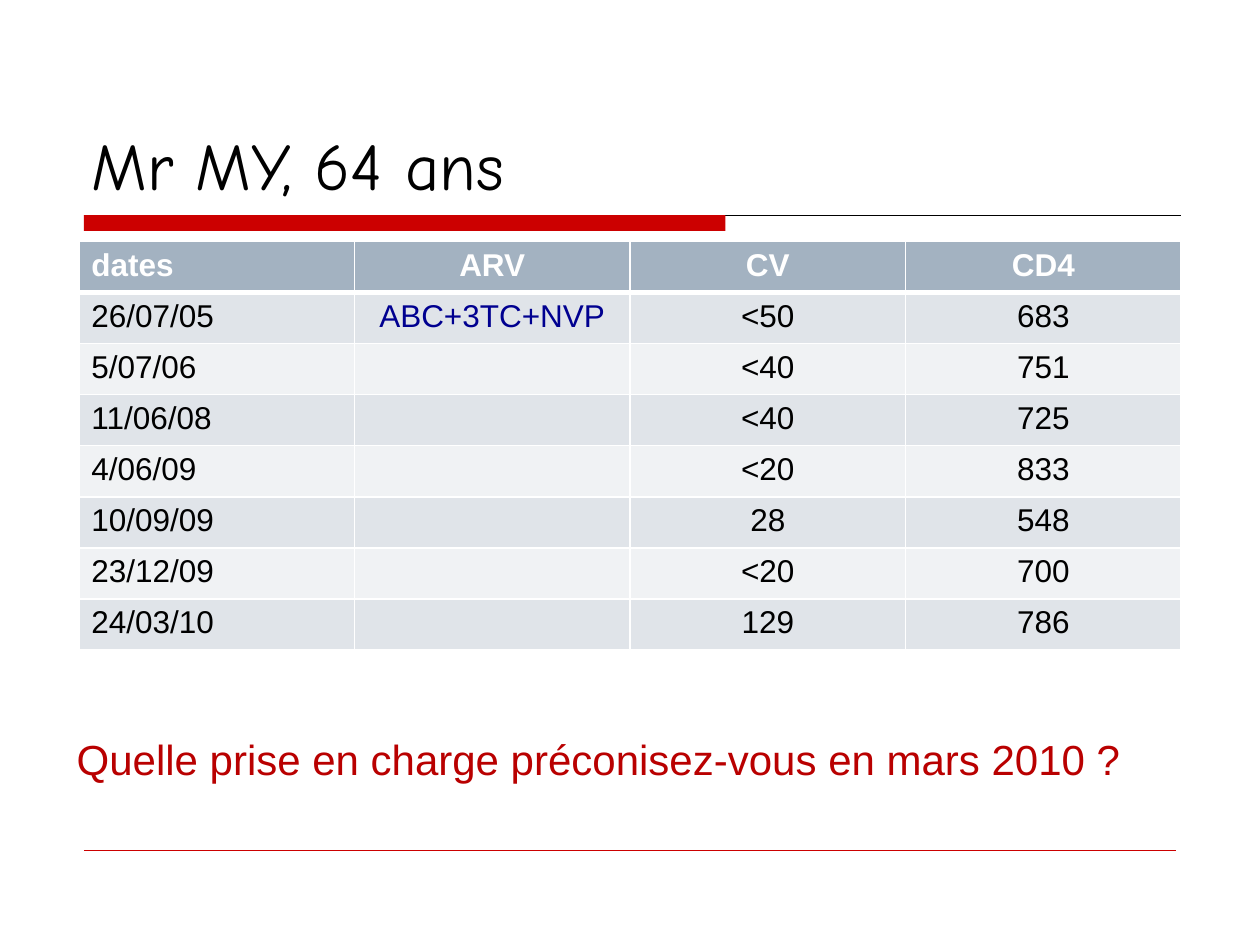
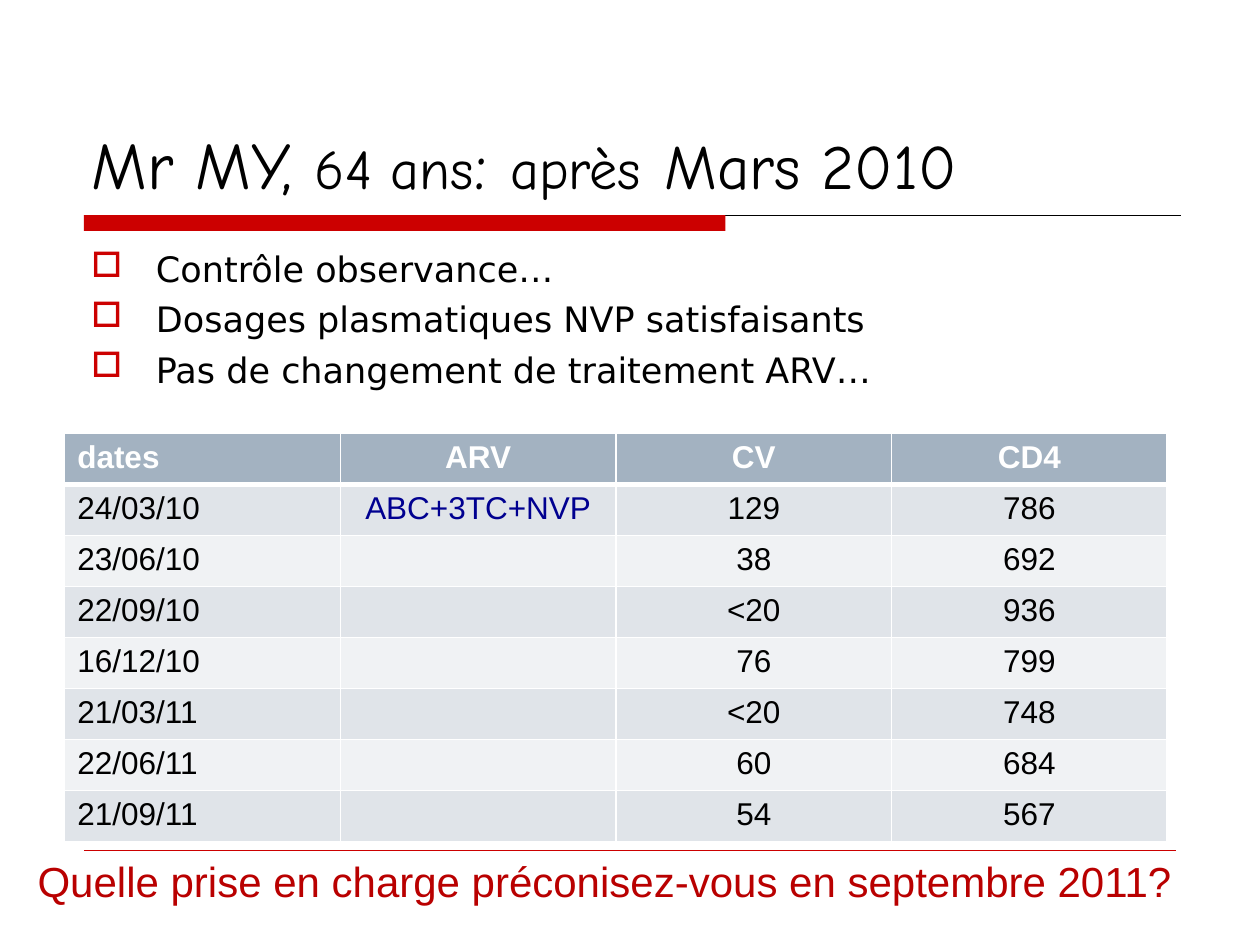
"""Build two patient follow-up slides with tables of laboratory results."""
import dataclasses
import typing

import lxml.etree
import pptx
import pptx.dml.color
import pptx.enum.shapes
import pptx.enum.text
import pptx.oxml.ns
import pptx.slide
import pptx.text.text
import pptx.util

Pt = pptx.util.Pt
qn = pptx.oxml.ns.qn
ALIGN = pptx.enum.text.PP_ALIGN
ANCHOR = pptx.enum.text.MSO_ANCHOR

RED, QUESTION_RED, BLACK, WHITE = "CC0000", "B90000", "000000", "FFFFFF"
HEADER_FILL, ROW_FILLS, ARV_BLUE = "A3B2C1", ("E0E4E9", "F0F2F4"), "000090"
TITLE_FONT, BODY_FONT, TABLE_FONT = "Comic Neue", "DejaVu Sans", "Arial"
HEADINGS = ("dates", "ARV", "CV", "CD4")
ARV = "ABC+3TC+NVP"
COL_WIDTH, ROW_HEIGHT = 157.5, 29.16


@dataclasses.dataclass(frozen=True)
class Box:
    left: float
    top: float
    width: float
    height: float

    def lengths(self) -> tuple[int, ...]:
        return tuple(Pt(v) for v in dataclasses.astuple(self))


@dataclasses.dataclass(frozen=True)
class Result:
    date: str
    cv: str
    cd4: str
    arv: str = ""


@dataclasses.dataclass(frozen=True)
class Page:
    title: tuple[tuple[str, float], ...]
    table_at: tuple[float, float]
    results: tuple[Result, ...]
    question: str
    question_box: Box
    bullets: tuple[str, ...] = ()


TITLE_BOX = Box(45, 24, 630, 96)
BULLETS_BOX = Box(45, 138, 630, 81)
BAND = Box(48, 123, 366.5, 9)
RULE_RIGHT = 674.6
FOOTER_LINE = (48, 486, 672, 486)

PAGES = (
    Page(
        title=(("Mr MY, 64 ans", 38),),
        table_at=(45, 138),
        results=(
            Result("26/07/05", "<50", "683", ARV),
            Result("5/07/06", "<40", "751"),
            Result("11/06/08", "<40", "725"),
            Result("4/06/09", "<20", "833"),
            Result("10/09/09", "28", "548"),
            Result("23/12/09", "<20", "700"),
            Result("24/03/10", "129", "786"),
        ),
        question="Quelle prise en charge préconisez-vous en mars 2010 ?",
        question_box=Box(36.7, 415.5, 669, 36),
    ),
    Page(
        title=(("Mr MY, ", 38), ("64 ans", 32), (": ", 40), ("après", 32),
               (" ", 40), ("Mars 2010", 36)),
        table_at=(37, 247.7),
        results=(
            Result("24/03/10", "129", "786", ARV),
            Result("23/06/10", "38", "692"),
            Result("22/09/10", "<20", "936"),
            Result("16/12/10", "76", "799"),
            Result("21/03/11", "<20", "748"),
            Result("22/06/11", "60", "684"),
            Result("21/09/11", "54", "567"),
        ),
        question="Quelle prise en charge préconisez-vous en septembre 2011?",
        question_box=Box(14.4, 485.5, 686, 57.6),
        bullets=(
            "Contrôle observance…",
            "Dosages plasmatiques NVP satisfaisants",
            "Pas de changement de traitement ARV…",
        ),
    ),
)


def rgb(color: str) -> pptx.dml.color.RGBColor:
    """Turn a hex string into a colour."""
    return pptx.dml.color.RGBColor.from_string(color)


def apply(target: typing.Any, values: dict[str, typing.Any]) -> None:
    """Set each named attribute on the target."""
    for name, value in values.items():
        setattr(target, name, value)


def add_run(p: typing.Any, text: str, font: str, size: float, color: str,
            bold: bool = False) -> None:
    """Append a formatted run to a paragraph."""
    r = p.add_run()
    r.text = text
    apply(r.font, {"name": font, "size": Pt(size), "bold": bold})
    r.font.color.rgb = rgb(color)


def add_line(slide: pptx.slide.Slide, ends: tuple[float, ...], color: str,
             width: float) -> None:
    """Draw a straight line without a shadow."""
    line = slide.shapes.add_connector(
        pptx.enum.shapes.MSO_CONNECTOR.STRAIGHT, *(Pt(v) for v in ends))
    line.line.color.rgb = rgb(color)
    line.line.width = Pt(width)
    lxml.etree.SubElement(line._element.spPr, qn("a:effectLst"))


def add_frame(slide: pptx.slide.Slide) -> None:
    """Draw the title band, its rule and the footer line."""
    add_line(slide, (BAND.left, BAND.top, RULE_RIGHT, BAND.top), BLACK, 0.75)
    sp = slide.shapes.add_shape(
        pptx.enum.shapes.MSO_SHAPE.RECTANGLE, *BAND.lengths())
    sp.shadow.inherit = False
    sp.fill.solid()
    sp.fill.fore_color.rgb = rgb(RED)
    sp.line.fill.background()
    add_line(slide, FOOTER_LINE, RED, 0.25)


def add_title(slide: pptx.slide.Slide, runs: tuple[tuple[str, float], ...]) -> None:
    """Place and fill the title placeholder."""
    sp = slide.shapes.title
    apply(sp, dict(zip(("left", "top", "width", "height"), TITLE_BOX.lengths())))
    tf = sp.text_frame
    apply(tf, {"word_wrap": True, "vertical_anchor": ANCHOR.BOTTOM,
               "auto_size": pptx.enum.text.MSO_AUTO_SIZE.NONE})
    p = tf.paragraphs[0]
    p.alignment = ALIGN.LEFT
    for text, size in runs:
        add_run(p, text, TITLE_FONT, size, BLACK)


def add_text_box(slide: pptx.slide.Slide, box: Box) -> pptx.text.text.TextFrame:
    """Add a wrapping text box and return its text frame."""
    tf = slide.shapes.add_textbox(*box.lengths()).text_frame
    tf.word_wrap = True
    return tf


def add_bullets(slide: pptx.slide.Slide, items: tuple[str, ...]) -> None:
    """Add a list with red square bullets."""
    tf = add_text_box(slide, BULLETS_BOX)
    for i, item in enumerate(items):
        p = tf.add_paragraph() if i else tf.paragraphs[0]
        p.space_before = Pt(4.7)
        add_run(p, item, BODY_FONT, 20, BLACK)
        pPr = p._p.get_or_add_pPr()
        pPr.set("marL", str(Pt(37)))
        pPr.set("indent", str(Pt(-37)))
        clr = lxml.etree.SubElement(pPr, qn("a:buClr"))
        lxml.etree.SubElement(clr, qn("a:srgbClr"), val=RED)
        lxml.etree.SubElement(pPr, qn("a:buChar"), char="□")


def set_borders(cell: typing.Any, row: int) -> None:
    """Give a cell white borders, thicker under the header row."""
    widths = {"L": 1, "R": 1, "T": 3 if row == 1 else 1, "B": 3 if row == 0 else 1}
    tcPr = cell._tc.get_or_add_tcPr()
    for side, width in widths.items():
        ln = lxml.etree.SubElement(tcPr, qn(f"a:ln{side}"), w=str(Pt(width)))
        fill = lxml.etree.SubElement(ln, qn("a:solidFill"))
        lxml.etree.SubElement(fill, qn("a:srgbClr"), val=WHITE)


def add_results(slide: pptx.slide.Slide, at: tuple[float, float],
                results: tuple[Result, ...]) -> None:
    """Add the table of results below its header row."""
    rows = [HEADINGS, *((x.date, x.arv, x.cv, x.cd4) for x in results)]
    box = Box(*at, COL_WIDTH * len(HEADINGS), ROW_HEIGHT * len(rows))
    table = slide.shapes.add_table(len(rows), len(HEADINGS), *box.lengths()).table
    for row in table.rows:
        row.height = Pt(ROW_HEIGHT)
    for i, texts in enumerate(rows):
        for j, text in enumerate(texts):
            cell = table.cell(i, j)
            set_borders(cell, i)
            cell.fill.solid()
            cell.fill.fore_color.rgb = rgb(ROW_FILLS[(i - 1) % 2] if i else HEADER_FILL)
            if text:
                p = cell.text_frame.paragraphs[0]
                p.alignment = ALIGN.CENTER if j else ALIGN.LEFT
                color = WHITE if i == 0 else ARV_BLUE if j == 1 else BLACK
                add_run(p, text, TABLE_FONT, 18, color, bold=i == 0)


def add_page(prs: typing.Any, page: Page) -> None:
    """Build one slide."""
    slide = prs.slides.add_slide(prs.slide_layouts.get_by_name("Title Only"))
    add_frame(slide)
    add_title(slide, page.title)
    if page.bullets:
        add_bullets(slide, page.bullets)
    add_results(slide, page.table_at, page.results)
    tf = add_text_box(slide, page.question_box)
    add_run(tf.paragraphs[0], page.question, TABLE_FONT, 24, QUESTION_RED)


def main() -> None:
    """Build and save the presentation."""
    prs = pptx.Presentation()
    apply(prs, {"slide_width": Pt(720), "slide_height": Pt(540)})
    for page in PAGES:
        add_page(prs, page)
    prs.save("out.pptx")


if __name__ == "__main__":
    main()
